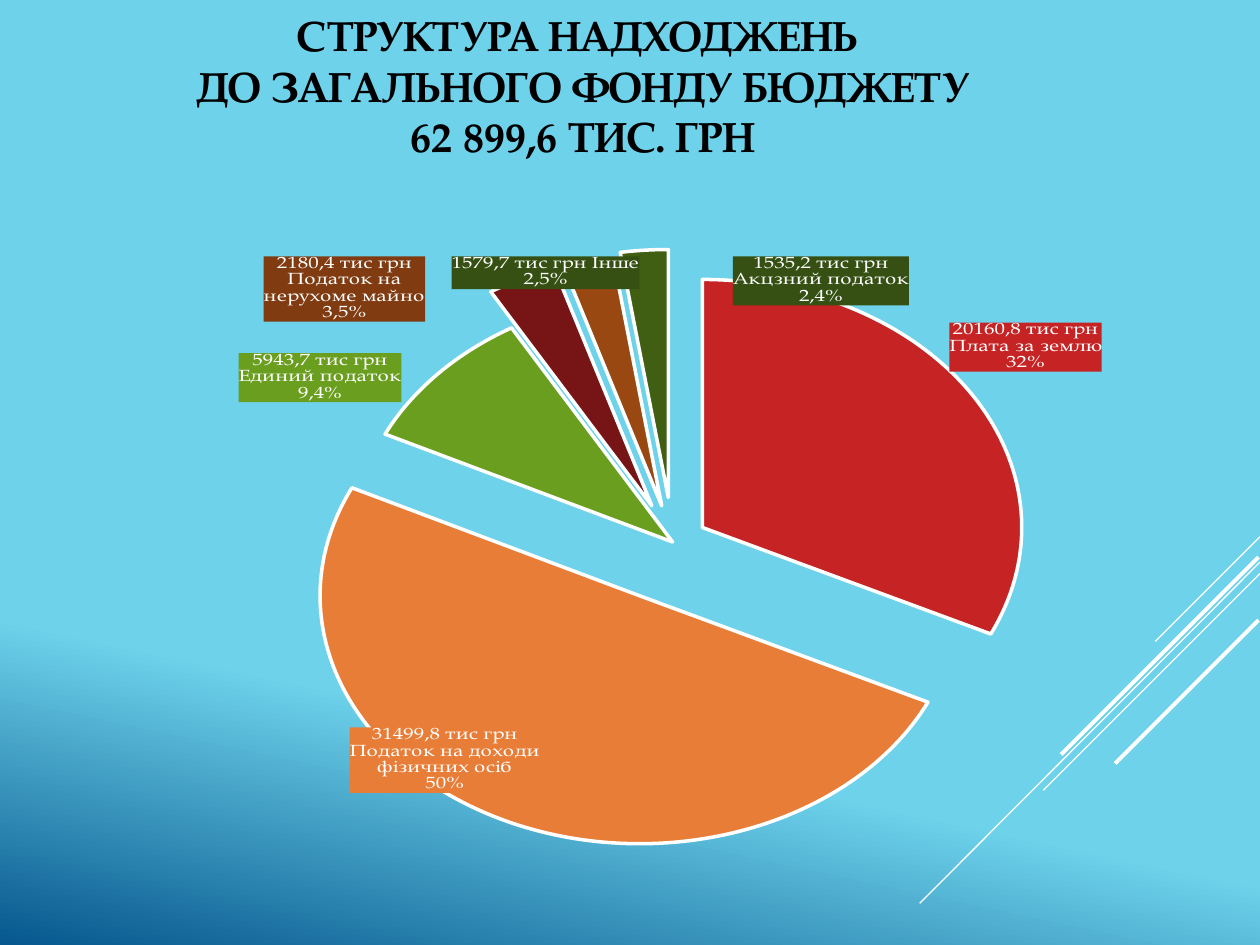
from lxml.etree import SubElement
from pptx import Presentation
from pptx.chart.data import CategoryChartData
from pptx.dml.color import RGBColor
from pptx.enum.chart import XL_CHART_TYPE, XL_LABEL_POSITION
from pptx.enum.shapes import MSO_CONNECTOR
from pptx.enum.text import MSO_ANCHOR, PP_ALIGN
from pptx.oxml import parse_xml
from pptx.oxml.ns import nsdecls, qn
from pptx.util import Cm, Pt

FONT = "TeX Gyre Pagella"
COLORS = {
    "sky": "6ED2EB", "deep": "06588E", "white": "FFFFFF", "black": "000000",
    "red": "C62324", "orange": "E87D37", "green": "6A9E1F",
    "maroon": "771516", "brown": "9A4812", "forest": "405F13",
    "brown label": "803B11", "forest label": "355012",
}
TITLE_FORMAT = {"name": FONT, "size": Pt(24), "bold": True}
LABEL_FORMAT = {"name": FONT, "size": Pt(12), "bold": False}
CHART_FORMAT = {"name": FONT, "size": Pt(10), "bold": True}

TITLE = "СТРУКТУРА НАДХОДЖЕНЬ \vДО ЗАГАЛЬНОГО ФОНДУ БЮДЖЕТУ\v62 899,6 ТИС. ГРН"

INSIDE, OUTSIDE = XL_LABEL_POSITION.INSIDE_END, XL_LABEL_POSITION.OUTSIDE_END

# Category, value, slice colour, explosion, label colour, label place and shift, label lines
SLICES = [
    ("Плата за землю", 32, "red", 11, "red", INSIDE, (0.13, -0.14),
     ["20160,8 тис грн", "Плата за землю", "32%"]),
    ("Податок на доходи фізичних осіб", 50, "orange", 24, "orange", OUTSIDE, (0.04, -0.18),
     ["31499,8 тис грн", "Податок на доходи", "фізичних осіб", "50%"]),
    ("Единий податок", 9.4, "green", 0, "green", OUTSIDE, (-0.03, 0.06),
     ["5943,7 тис грн", "Единий податок", "9,4%"]),
    ("Податок на нерухоме майно", 3.5, "maroon", 16, "brown label", OUTSIDE, (-0.09, 0.06),
     ["2180,4 тис грн", "Податок на", "нерухоме майно", "3,5%"]),
    ("Інше", 2.5, "brown", 15, "forest label", OUTSIDE, (0.05, 0.04),
     ["1579,7 тис грн Інше", "2,5%"]),
    ("Акцзний податок", 2.4, "forest", 18, "forest label", OUTSIDE, (0.17, 0.09),
     ["1535,2 тис грн", "Акцзний податок", "2,4%"]),
]

# Start x, start y, end x, end y in cm, width in points
RAYS = [
    (25.4, 10.82, 23.29, 12.93, 0.75),
    (25.4, 11.33, 18.54, 18.21, 0.75),
    (25.4, 11.56, 21.03, 15.93, 0.75),
    (25.37, 11.23, 21.39, 15.21, 2.25),
    (25.37, 12.5, 22.48, 15.39, 2.25),
]


def color(name):
    return RGBColor.from_string(COLORS[name])


def format_font(font, values, color_name):
    for key, value in values.items():
        setattr(font, key, value)
    font.color.rgb = color(color_name)


def paint_background(page):
    fill = page.background.fill
    fill.gradient()
    fill.gradient_angle = 258
    for stop, (position, name) in zip(fill.gradient_stops, [(0.73, "sky"), (1, "deep")]):
        stop.position = position
        stop.color.rgb = color(name)


def add_ray(page, x1, y1, x2, y2, width):
    ray = page.shapes.add_connector(MSO_CONNECTOR.STRAIGHT, Cm(x1), Cm(y1), Cm(x2), Cm(y2))
    ray.line.color.rgb = color("white")
    ray.line.width = Pt(width)
    SubElement(ray._element.spPr, qn("a:effectLst"))


def write_para(para, text, values, color_name):
    para.text = text
    para.alignment = PP_ALIGN.CENTER
    for span in para.runs:
        format_font(span.font, values, color_name)


def add_title(page):
    box = page.shapes.add_textbox(Cm(1.9), Cm(0.33), Cm(19.69), Cm(2.79))
    box.text_frame.word_wrap = True
    box.text_frame.vertical_anchor = MSO_ANCHOR.MIDDLE
    write_para(box.text_frame.paragraphs[0], TITLE, TITLE_FORMAT, "black")


def layout_xml(parts):
    items = "".join(f'<c:{tag} val="{value}"/>' for tag, value in parts.items())
    return parse_xml(f'<c:layout {nsdecls("c")}><c:manualLayout>{items}</c:manualLayout></c:layout>')


def format_label(label, fill_name, place, shift, lines):
    frame = label.text_frame
    for number, line in enumerate(lines):
        para = frame.add_paragraph() if number else frame.paragraphs[0]
        write_para(para, line, LABEL_FORMAT, "white")
    label.position = place
    text = frame._txBody.getparent()
    text.addprevious(layout_xml(dict(zip("xy", shift))))
    text.addnext(parse_xml(
        f'<c:spPr {nsdecls("c", "a")}><a:solidFill><a:srgbClr val="{COLORS[fill_name]}"/>'
        "</a:solidFill><a:ln><a:noFill/></a:ln></c:spPr>"))


def format_slice(point, color_name):
    point.format.fill.solid()
    point.format.fill.fore_color.rgb = color(color_name)
    point.format.line.color.rgb = color("white")
    point.format.line.width = Pt(2)


def add_pie(page):
    data = CategoryChartData()
    data.categories = [entry[0] for entry in SLICES]
    data.add_series("Series 1", [entry[1] for entry in SLICES])
    chart = page.shapes.add_chart(
        XL_CHART_TYPE.PIE, Cm(2.31), Cm(3.94), Cm(21.03), Cm(14), data).chart
    chart.has_legend = False
    chart.has_title = False
    format_font(chart.font, CHART_FORMAT, "white")

    # Plot area
    plot = chart.plots[0]
    plot.vary_by_categories = True
    area = plot._element.getparent()
    for old in area.findall(qn("c:layout")):
        area.remove(old)
    area.insert(0, layout_xml({"layoutTarget": "inner", "xMode": "edge", "yMode": "edge",
                               "x": 0.07, "y": 0.07, "w": 0.93, "h": 0.92}))

    # Slices and their labels
    series = plot.series[0]
    labels = series.data_labels
    labels.show_percentage = True
    labels.show_category_name = True
    labels.show_value = False
    for leader in labels._element.findall(qn("c:showLeaderLines")):
        leader.set("val", "0")
    for number, (_, _, name, _, label_name, place, shift, lines) in enumerate(SLICES):
        point = series.points[number]
        format_slice(point, name)
        format_label(point.data_label, label_name, place, shift, lines)
    for item, entry in zip(series._element.findall(qn("c:dPt")), SLICES):
        item.find(qn("c:spPr")).addprevious(
            parse_xml(f'<c:explosion {nsdecls("c")} val="{entry[3]}"/>'))


def main():
    deck = Presentation()
    deck.slide_width, deck.slide_height = Cm(25.4), Cm(19.05)
    page = deck.slides.add_slide(deck.slide_layouts[6])
    paint_background(page)
    for ray in RAYS:
        add_ray(page, *ray)
    add_title(page)
    add_pie(page)
    deck.save("out.pptx")


if __name__ == "__main__":
    main()
